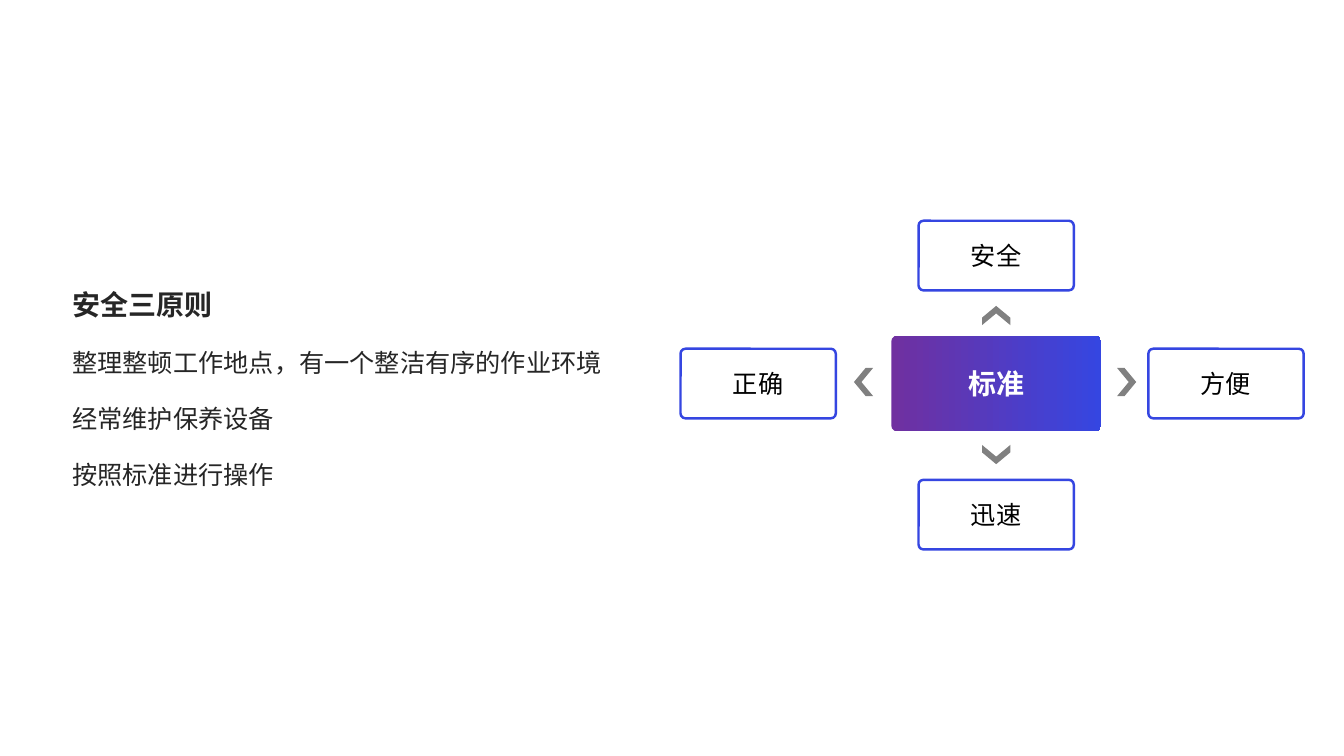
"""Build the slide on the three safety rules and the standard they rest on."""
from dataclasses import dataclass

import pptx
import pptx.dml.color
import pptx.enum.shapes
import pptx.enum.text
import pptx.oxml
import pptx.oxml.ns
import pptx.util

FONT = "Noto Sans CJK SC"
INK, BLUE, PLUM, GRAY = "262626", "3546E1", "7030A0", "808080"
WIDE, HIGH = pptx.util.Inches(13.33), pptx.util.Inches(7.5)
KIND = pptx.enum.shapes.MSO_SHAPE
ALIGN = pptx.enum.text.PP_ALIGN
HUB_X, HUB_Y = 74.12, 50.73
LEFT, TOP, STEP = 4.65, 45.33, 7.4


@dataclass
class Area:
    """Hold a frame in percent of the slide's width and height."""
    x: float
    y: float
    w: float
    h: float

    def frame(self) -> tuple[int, int, int, int]:
        """Return left, top, width and height as lengths."""
        return (round(WIDE * self.x / 100), round(HIGH * self.y / 100),
                round(WIDE * self.w / 100), round(HIGH * self.h / 100))


@dataclass
class Goal:
    """Describe an outer box and the chevron that points to it."""
    text: str
    x: float
    y: float
    tip_x: float
    tip_y: float
    turn: int


GOALS = [
    Goal("安全", HUB_X, 33.8, HUB_X, 41.73, 270),
    Goal("正确", 56.41, HUB_Y, 64.25, 50.53, 180),
    Goal("方便", 91.22, HUB_Y, 83.83, 50.53, 0),
    Goal("迅速", HUB_X, 68.07, HUB_X, 60.13, 90),
]
RULES = ["整理整顿工作地点，有一个整洁有序的作业环境", "经常维护保养设备", "按照标准进行操作"]


def color(code: str) -> pptx.dml.color.RGBColor:
    """Turn a hex string into a color."""
    return pptx.dml.color.RGBColor.from_string(code)


def mid(x: float, y: float, w: float, h: float) -> Area:
    """Return an area centered on a point."""
    return Area(x - w / 2, y - h / 2, w, h)


def write(shape, text: str, size: int, code: str, bold: bool, align) -> None:
    """Write one line of text into a shape."""
    body = shape.text_frame
    body.word_wrap = True
    body.vertical_anchor = pptx.enum.text.MSO_ANCHOR.MIDDLE
    line = body.paragraphs[0]
    line.alignment = align
    run = line.add_run()
    run.text = text
    font = run.font
    font.size, font.bold, font.name = pptx.util.Pt(size), bold, FONT
    font.color.rgb = color(code)
    east = pptx.oxml.parse_xml(
        f'<a:ea {pptx.oxml.ns.nsdecls("a")} typeface="{FONT}"/>')
    run.font._element.find(pptx.oxml.ns.qn("a:latin")).addnext(east)


def draw(slide, kind, area: Area, bend: float):
    """Add a preset shape without shadow or line."""
    shape = slide.shapes.add_shape(kind, *area.frame())
    shape.shadow.inherit = False
    shape.adjustments[0] = bend
    shape.line.fill.background()
    return shape


def head(slide) -> None:
    """Place and fill the title."""
    title = slide.shapes.title
    title.left, title.top, title.width, title.height = Area(
        LEFT, 37.33, 15.6, 5.87).frame()
    write(title, "安全三原则", 20, INK, True, ALIGN.LEFT)


def rule(slide, row: int, text: str) -> None:
    """Add one rule below the title."""
    area = Area(LEFT, TOP + STEP * row, 42.76, 5.33)
    box = slide.shapes.add_textbox(*area.frame())
    write(box, text, 18, INK, False, ALIGN.LEFT)


def hub(slide) -> None:
    """Add the center box with its gradient."""
    box = draw(slide, KIND.ROUNDED_RECTANGLE,
               mid(HUB_X, HUB_Y, 15.6, 12.67), 0.06)
    box.fill.gradient()
    box.fill.gradient_angle = 0
    for stop, code, spot in zip(box.fill.gradient_stops, (PLUM, BLUE), (0, 1)):
        stop.color.rgb = color(code)
        stop.position = spot
    write(box, "标准", 20, "FFFFFF", True, ALIGN.CENTER)


def spoke(slide, goal: Goal) -> None:
    """Add an outer box and its chevron."""
    box = draw(slide, KIND.ROUNDED_RECTANGLE,
               mid(goal.x, goal.y, 11.55, 9.2), 0.07)
    box.fill.background()
    box.line.color.rgb = color(BLUE)
    box.line.width = pptx.util.Pt(1.75)
    write(box, goal.text, 18, "000000", False, ALIGN.CENTER)
    tip = draw(slide, KIND.CHEVRON,
               mid(goal.tip_x, goal.tip_y, 1.43, 3.73), 0.61)
    tip.fill.solid()
    tip.fill.fore_color.rgb = color(GRAY)
    tip.rotation = goal.turn


def main() -> None:
    """Build and save the slide."""
    deck = pptx.Presentation()
    deck.slide_width, deck.slide_height = WIDE, HIGH
    slide = deck.slides.add_slide(deck.slide_layouts.get_by_name("Title Only"))
    head(slide)
    for row, text in enumerate(RULES):
        rule(slide, row, text)
    hub(slide)
    for goal in GOALS:
        spoke(slide, goal)
    deck.save("out.pptx")


if __name__ == "__main__":
    main()
